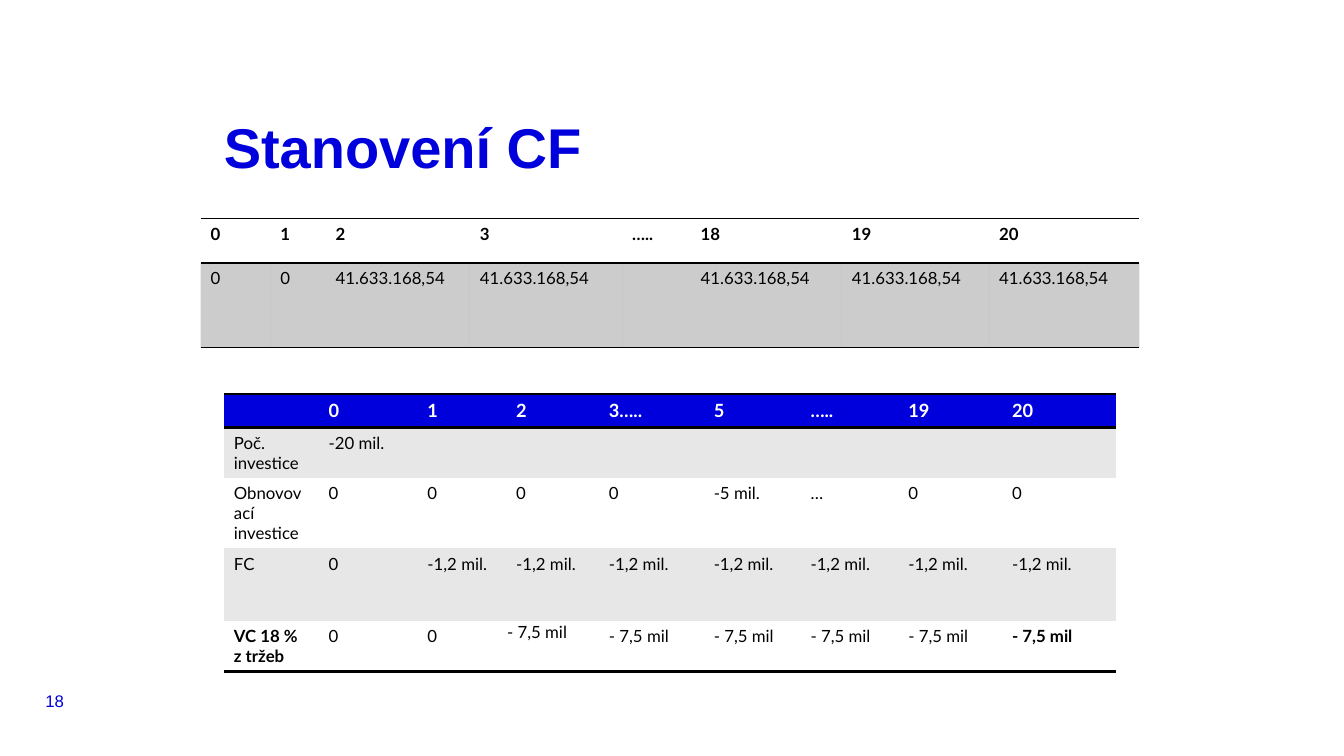
import dataclasses

import pptx
import pptx.dml.color
import pptx.enum.text
import pptx.oxml
import pptx.oxml.ns
import pptx.util
from lxml import etree

Inches = pptx.util.Inches
Pt = pptx.util.Pt
qn = pptx.oxml.ns.qn
ANCHOR = pptx.enum.text.MSO_ANCHOR
NO_STYLE = "{2D5ABB26-0587-4C30-8999-92F81FD0307C}"


@dataclasses.dataclass(frozen=True)
class Theme:
    blue: str = "0000DC"
    black: str = "000000"
    white: str = "FFFFFF"
    band: str = "E7E7E7"
    heading_font: str = "Arial"
    table_font: str = "Lato"
    title: int = 40
    header: int = 13
    body: int = 12


def write_text(tf, text, font, size, color, bold=False, spacing=None):
    p = tf.paragraphs[0]
    if spacing:
        p.line_spacing = Pt(spacing)
    if not text:
        etree.SubElement(p._p, qn("a:endParaRPr"), sz=str(size * 100))
        return
    r = p.add_run()
    r.text = text
    r.font.name = font
    r.font.size = Pt(size)
    r.font.bold = bold
    r.font.color.rgb = pptx.dml.color.RGBColor.from_string(color)


class SlideBuilder:
    def __init__(self, s, theme):
        self.s = s
        self.theme = theme

    def text(self, box, text, wrap=True, anchor=ANCHOR.TOP, **style):
        sp = self.s.shapes.add_textbox(*map(Inches, box))
        tf = sp.text_frame
        tf.word_wrap = wrap
        tf.vertical_anchor = anchor
        tf.margin_left = tf.margin_right = tf.margin_top = tf.margin_bottom = 0
        write_text(tf, text, **style)

    def table(self, left, top, widths, heights):
        sp = self.s.shapes.add_table(
            len(heights), len(widths), Inches(left), Inches(top),
            Inches(sum(widths)), Inches(sum(heights)))
        tbl = sp.table
        tbl.first_row = tbl.horz_banding = False
        tbl._tbl.tblPr.find(qn("a:tableStyleId")).text = NO_STYLE
        for column, width in zip(tbl.columns, widths):
            column.width = Inches(width)
        for row, height in zip(tbl.rows, heights):
            row.height = Inches(height)
        return tbl

    def cell(self, cell, text, fill, alpha=None, borders=(), weight=1, **style):
        tcPr = cell._tc.get_or_add_tcPr()
        for edge in borders:
            ln = etree.SubElement(tcPr, qn(f"a:{edge}"), w=str(Pt(weight)))
            solid = etree.SubElement(ln, qn("a:solidFill"))
            etree.SubElement(solid, qn("a:srgbClr"), val=self.theme.black)
        cell.fill.solid()
        cell.fill.fore_color.rgb = pptx.dml.color.RGBColor.from_string(fill)
        if alpha:
            color = tcPr.find(qn("a:solidFill")).find(qn("a:srgbClr"))
            etree.SubElement(color, qn("a:alpha"), val=str(alpha * 1000))
        write_text(cell.text_frame, text, font=self.theme.table_font, **style)

    def revenue_table(self):
        t = self.theme
        amount = "41.633.168,54"
        rows = [
            ["0", "1", "2", "3", "…..", "18", "19", "20"],
            ["0", "0", amount, amount, "", amount, amount, amount],
        ]
        tbl = self.table(1.99, 2.17, [0.69, 0.55, 1.43, 1.51, 0.68, 1.5, 1.46, 1.49],
                         [0.44, 0.84])
        for i, row in enumerate(rows):
            header = i == 0
            for j, text in enumerate(row):
                self.cell(tbl.cell(i, j), text,
                          fill=t.white if header else t.black,
                          alpha=None if header else 20,
                          borders=("lnT", "lnB"),
                          size=t.body, color=t.black, bold=header)

    def cost_table(self):
        t = self.theme
        rows = [
            ["", "0", "1", "2", "3…..", "5", "…..", "19", "20"],
            ["Poč. investice", "-20 mil."] + [""] * 7,
            ["Obnovovací investice", "0", "0", "0", "0", "-5 mil.", "…", "0", "0"],
            ["FC", "0"] + ["-1,2 mil."] * 7,
            ["VC 18 % z tržeb", "0", "0"] + ["- 7,5 mil"] * 6,
        ]
        tbl = self.table(2.22, 3.91,
                         [0.94, 0.98, 0.88, 0.92, 1.04, 0.96, 0.97, 1.03, 1.13],
                         [0.33, 0.5, 0.69, 0.72, 0.5])
        last = len(rows) - 1
        edges = {0: ("lnT", "lnB"), last: ("lnB",)}
        for i, row in enumerate(rows):
            header = i == 0
            fill = t.blue if header else t.band if i % 2 else t.white
            for j, text in enumerate(row):
                self.cell(tbl.cell(i, j), text, fill=fill,
                          borders=edges.get(i, ()), weight=2,
                          size=t.header if header else t.body,
                          color=t.white if header else t.black,
                          bold=header or (i == last and j in (0, len(row) - 1)))
        tight = tbl.cell(last, 3)
        tight.margin_left = tight.margin_right = tight.margin_top = Inches(0.01)
        tight.margin_bottom = 0


def main():
    prs = pptx.Presentation()
    prs.slide_width = Inches(13.33)
    prs.slide_height = Inches(7.5)
    theme = Theme()
    slide = SlideBuilder(prs.slides.add_slide(prs.slide_layouts[6]), theme)
    slide.text((0.45, 6.81, 0.28, 0.28), "18", wrap=False, anchor=ANCHOR.MIDDLE,
               font=theme.heading_font, size=theme.body, color=theme.blue)
    slide.cost_table()
    slide.revenue_table()
    slide.text((2.22, 1.23, 8.84, 0.71), "Stanovení CF", font=theme.heading_font,
               size=theme.title, color=theme.blue, bold=True, spacing=theme.title)
    prs.save("out.pptx")


if __name__ == "__main__":
    main()
